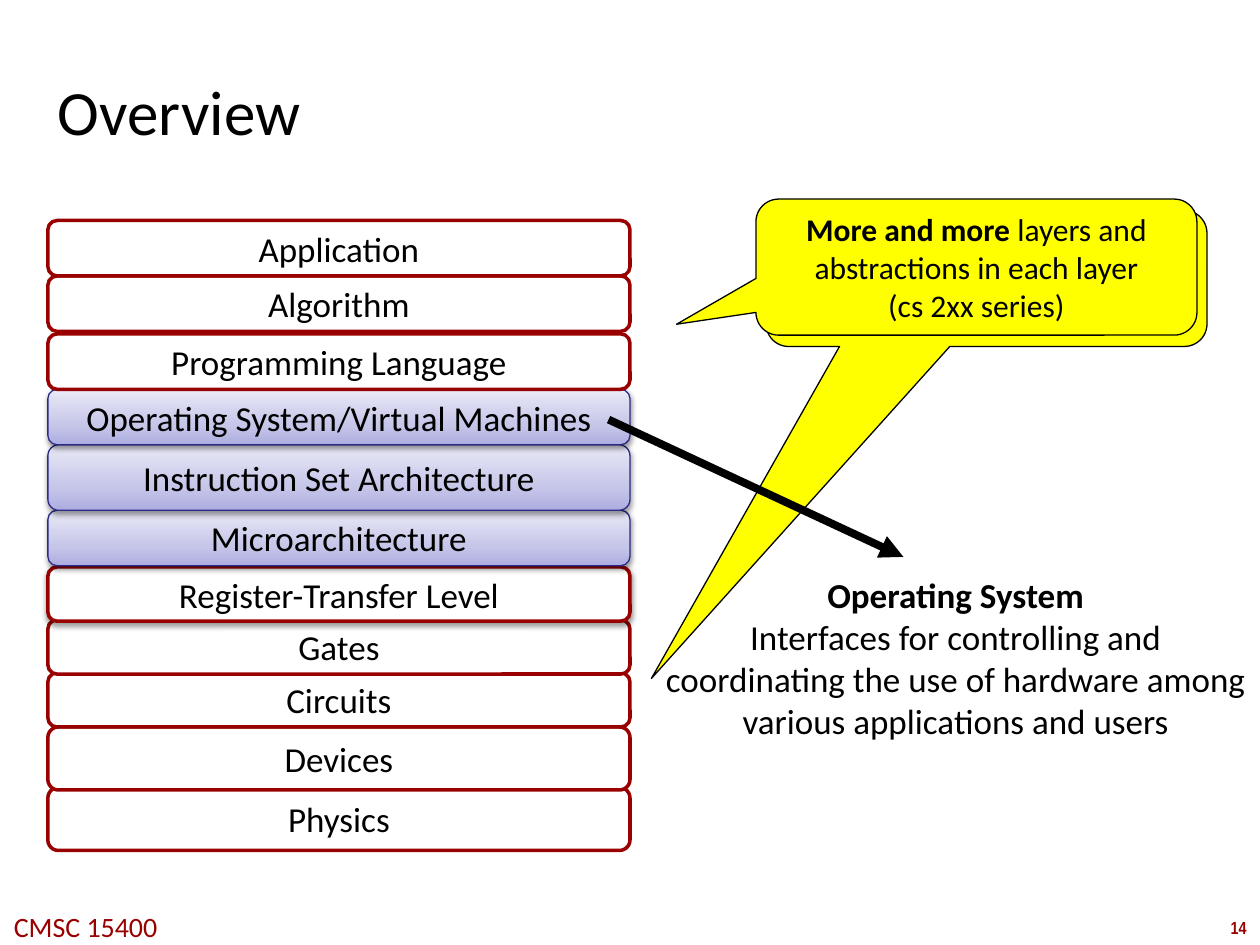
from copy import deepcopy

from pptx import Presentation
from pptx.dml.color import RGBColor
from pptx.enum.shapes import MSO_CONNECTOR as CONN, MSO_SHAPE as SHAPE
from pptx.enum.text import MSO_ANCHOR as ANCHOR, PP_ALIGN as ALIGN
from pptx.oxml import parse_xml
from pptx.oxml.ns import nsdecls, qn
from pptx.util import Inches, Pt

rgb = RGBColor.from_string


def write(frame, paras, size, color="000000", font="Calibri", align=ALIGN.CENTER):
    """Fill a text frame; each paragraph is a list of (text, bold) runs."""
    for i, runs in enumerate(paras):
        para = frame.paragraphs[0] if i == 0 else frame.add_paragraph()
        para.alignment = align
        for text, bold in runs:
            run = para.add_run()
            run.text = text
            run.font.name = font
            run.font.size = Pt(size)
            run.font.bold = bold
            run.font.color.rgb = rgb(color)


def add_box(kind, left, top, width, height, fill, line, weight):
    """Add a shape with a plain fill and outline and no shadow."""
    box = slide.shapes.add_shape(
        kind, Inches(left), Inches(top), Inches(width), Inches(height))
    box.shadow.inherit = False
    box.fill.solid()
    box.fill.fore_color.rgb = rgb(fill)
    box.line.color.rgb = rgb(line)
    box.line.width = Pt(weight)
    box.text_frame.vertical_anchor = ANCHOR.MIDDLE
    return box


prs = Presentation()
prs.slide_width, prs.slide_height = Inches(10), Inches(7.5)
slide = prs.slides.add_slide(prs.slide_layouts[5])

# Title
title = slide.shapes.title
title.left, title.top = Inches(0.42), Inches(0.28)
title.width, title.height = Inches(9.17), Inches(1.19)
frame = title.text_frame
frame.vertical_anchor = ANCHOR.MIDDLE
frame.margin_left = frame.margin_right = Inches(0.04)
frame.margin_top = frame.margin_bottom = Inches(0.04)
write(frame, [[("Overview", False)]], 36, align=ALIGN.LEFT)

# Footer: slide number and course
for left, top, width, height, text, size, font, bold in [
    (9.66, 7.23, 0.34, 0.27, "14", 10, "Arial Narrow", True),
    (-0.03, 7.17, 1.42, 0.37, "CMSC 15400", 16, "Calibri", False),
]:
    note = slide.shapes.add_textbox(
        Inches(left), Inches(top), Inches(width), Inches(height))
    note.text_frame.word_wrap = False
    write(note.text_frame, [[(text, bold)]], size, "990000", font)

# Rear callout, pointing at the lower layers
rear = add_box(SHAPE.ROUNDED_RECTANGULAR_CALLOUT, 6.08, 1.67, 3.5, 1.08,
               "FFFF00", "000000", 0.75)
rear.adjustments[0], rear.adjustments[1] = -0.76, 2.94

# Layers, drawn from the bottom up: name, top, height, shaded, shadow
layers = [
    ("Physics", 6.25, 0.5, False, False),
    ("Devices", 5.77, 0.5, False, False),
    ("Circuits", 5.34, 0.43, False, False),
    ("Gates", 4.92, 0.43, False, False),
    ("Register-Transfer Level", 4.5, 0.43, False, True),
    ("Microarchitecture", 4.05, 0.44, True, True),
    ("Instruction Set Architecture", 3.53, 0.52, True, True),
    ("Operating System/Virtual Machines", 3.09, 0.44, True, True),
    ("Programming Language", 2.65, 0.44, False, False),
    ("Algorithm", 2.19, 0.44, False, False),
    ("Application", 1.75, 0.44, False, False),
]
shades = [(0, "ADADE1"), (0.35, "C6C6E9"), (1, "E9E9F7")]
for name, top, height, shaded, shadow in layers:
    line, weight = ("2A2A89", 0.75) if shaded else ("990000", 2)
    box = add_box(SHAPE.ROUNDED_RECTANGLE, 0.38, top, 4.62, height,
                  "FFFFFF", line, weight)
    props = box._element.spPr
    if shaded:
        box.fill.gradient()
        box.fill.gradient_angle = 90
        stops = props.find(qn("a:gradFill")).find(qn("a:gsLst"))
        stops.insert(1, deepcopy(stops[0]))
        for stop, (pos, color) in zip(box.fill.gradient_stops, shades):
            stop.position = pos
            stop.color.rgb = rgb(color)
    if shadow:
        props.find(qn("a:effectLst")).append(parse_xml(
            f'<a:outerShdw {nsdecls("a")} blurRad="{Pt(3.1)}" dist="{Pt(1.6)}" '
            'dir="5400000" rotWithShape="0"><a:srgbClr val="000000">'
            '<a:alpha val="38000"/></a:srgbClr></a:outerShdw>'))
    box.text_frame.word_wrap = False
    write(box.text_frame, [[(name, False)]], 20)

# Operating system definition and its arrow
note = slide.shapes.add_textbox(
    Inches(5.17), Inches(4.5), Inches(4.83), Inches(1.78))
note.text_frame.word_wrap = True
write(note.text_frame, [
    [("Operating System", True)],
    [("Interfaces for controlling and coordinating the use of hardware among "
      "various applications and users", False)],
], 20)

arrow = slide.shapes.add_connector(
    CONN.STRAIGHT, Inches(4.83), Inches(3.33), Inches(7.17), Inches(4.42))
arrow.line.color.rgb = rgb("000000")
arrow.line.width = Pt(4.5)
arrow.line._get_or_add_ln().append(
    parse_xml(f'<a:tailEnd {nsdecls("a")} type="triangle"/>'))
arrow._element.spPr.append(parse_xml(f'<a:effectLst {nsdecls("a")}/>'))

# Front callout, pointing at the upper layers
front = add_box(SHAPE.ROUNDED_RECTANGULAR_CALLOUT, 6, 1.58, 3.5, 1.08,
                "FFFF00", "000000", 0.75)
front.adjustments[0], front.adjustments[1] = -0.68, 0.42
front.text_frame.word_wrap = True
write(front.text_frame, [
    [("More and more ", True), ("layers and abstractions in each layer", False)],
    [("(cs 2xx series)", False)],
], 18)

prs.save("out.pptx")
